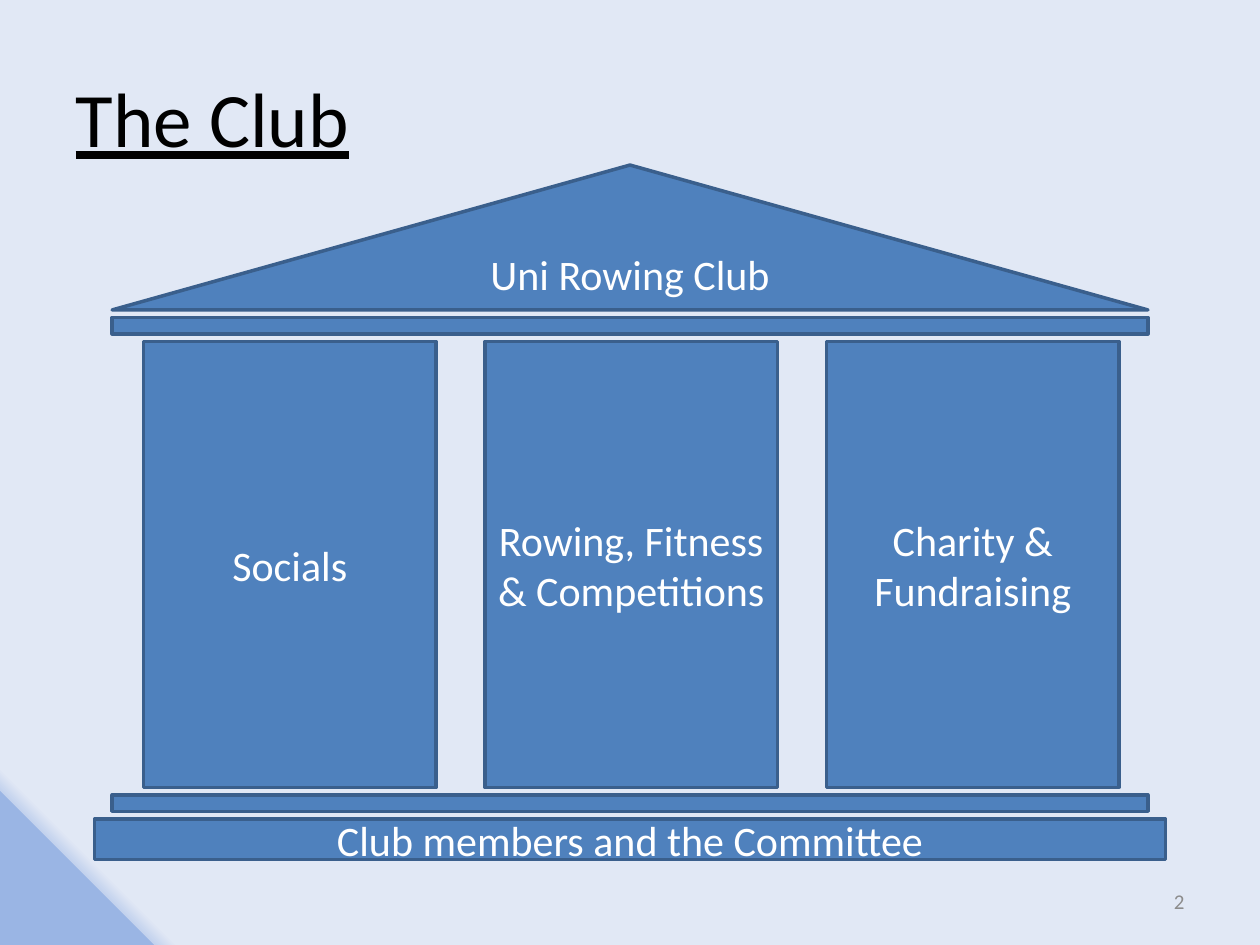
from copy import deepcopy

from pptx import Presentation
from pptx import util as u
from pptx.dml import color as col
from pptx.enum import shapes, text

HUES = {
    "ink": "000000", "white": "FFFFFF", "grey": "8C8C8C",
    "fill": "4F81BD", "edge": "3A5F8C",
    "deep": "9AB5E4", "mid": "C2D1ED", "pale": "E1E8F5",
}
STOPS = [("deep", 0.07), ("mid", 0.07), ("pale", 0.08)]
FONT = "Calibri"
RECT = shapes.MSO_SHAPE.RECTANGLE
ROOF = shapes.MSO_SHAPE.ISOSCELES_TRIANGLE
ALIGN = text.PP_ALIGN


def rgb(name):
    return col.RGBColor.from_string(HUES[name])


def write(frame, words, size, hue, align, line=False):
    frame.word_wrap = True
    frame.vertical_anchor = text.MSO_ANCHOR.MIDDLE
    par = frame.paragraphs[0]
    par.alignment = align
    run = par.add_run()
    run.text = words
    run.font.name = FONT
    run.font.size = u.Pt(size)
    run.font.underline = line
    run.font.color.rgb = rgb(hue)


def block(slide, kind, box, words=""):
    shape = slide.shapes.add_shape(kind, *map(u.Inches, box))
    shape.shadow.inherit = False
    shape.fill.solid()
    shape.fill.fore_color.rgb = rgb("fill")
    shape.line.color.rgb = rgb("edge")
    shape.line.width = u.Pt(2)
    if words:
        write(shape.text_frame, words, 24, "white", ALIGN.CENTER)


def back(slide):
    fill = slide.background.fill
    fill.gradient()
    fill.gradient_angle = 45
    first = fill.gradient_stops[0]._gs
    first.addnext(deepcopy(first))
    for stop, (hue, pos) in zip(fill.gradient_stops, STOPS):
        stop.color.rgb = rgb(hue)
        stop.position = pos


def head(slide, box, words):
    title = slide.shapes.title
    title.left, title.top, title.width, title.height = map(u.Inches, box)
    write(title.text_frame, words, 44, "ink", ALIGN.LEFT, True)


def temple(slide, box, roof, halls, base):
    left, top, wide, tall = box
    inset, gap, beam, foot = 0.14, 0.06, 0.13, 0.32
    peak, hall, space = 1.15, 2.32, 0.39
    span = wide - 2 * inset

    lintel = top + peak + gap
    floor = top + tall - foot - gap - beam
    high = lintel + beam + gap
    for i, words in enumerate(halls):
        x = left + space + i * (hall + space)
        block(slide, RECT, (x, high, hall, floor - gap - high), words)
    for y in (floor, lintel):
        block(slide, RECT, (left + inset, y, span, beam))
    block(slide, ROOF, (left + inset, top, span, peak), roof)
    block(slide, RECT, (left, top + tall - foot, wide, foot), base)


def number(slide, box, words):
    note = slide.shapes.add_textbox(*map(u.Inches, box))
    write(note.text_frame, words, 12, "grey", ALIGN.RIGHT)


def main():
    deck = Presentation()
    deck.slide_width, deck.slide_height = u.Inches(10), u.Inches(7.5)
    slide = deck.slides.add_slide(deck.slide_layouts[5])
    back(slide)
    head(slide, (0.5, 0.3, 9, 1.25), "The Club")
    number(slide, (7.17, 6.95, 2.33, 0.4), "2")
    temple(
        slide, (0.75, 1.31, 8.5, 5.51), "Uni Rowing Club",
        ["Socials", "Rowing, Fitness & Competitions", "Charity & Fundraising"],
        "Club members and the Committee",
    )
    deck.save("out.pptx")


if __name__ == "__main__":
    main()
